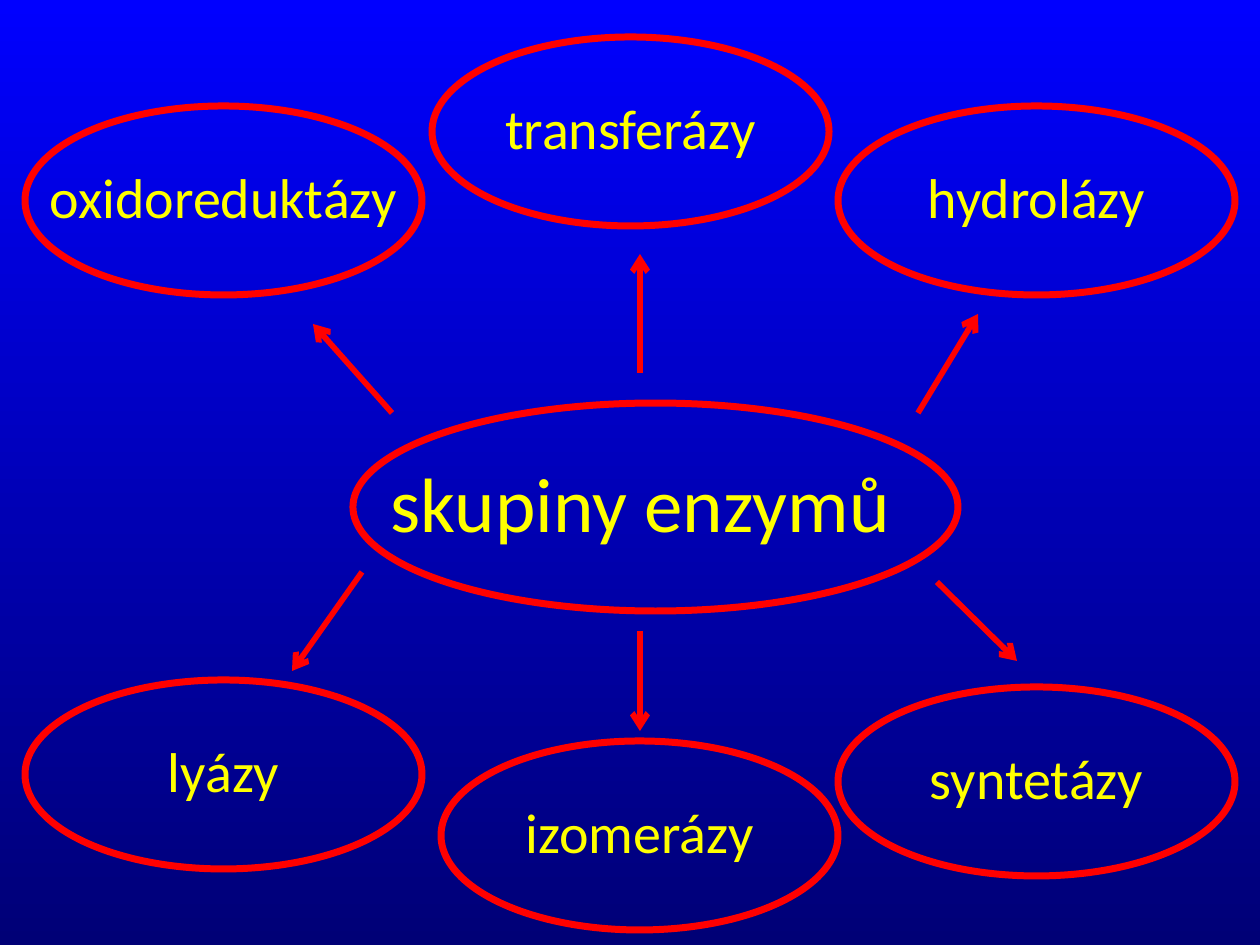
from dataclasses import dataclass

from lxml.etree import SubElement
from pptx import Presentation
from pptx.dml.color import RGBColor
from pptx.enum.shapes import MSO_CONNECTOR, MSO_SHAPE
from pptx.enum.text import MSO_ANCHOR, MSO_AUTO_SIZE, PP_ALIGN
from pptx.oxml.ns import qn
from pptx.util import Emu, Pt

PX_PER_INCH = 126
SLIDE_SIZE = (1260, 945)
GROUP_SIZE = (397, 189)
LABEL_OFFSET = (10, 50)
LABEL_SIZE = (377, 81)

GROUPS = [
    ("oxidoreduktázy", 25, 106),
    ("transferázy", 432, 37),
    ("hydrolázy", 838, 106),
    ("lyázy", 25, 680),
    ("izomerázy", 441, 741),
    ("syntetázy", 838, 687),
]
ARROWS = [
    ((392, 413), (313, 324)),
    ((640, 373), (640, 254)),
    ((918, 413), (978, 314)),
    ((362, 572), (292, 671)),
    ((640, 631), (640, 731)),
    ((937, 582), (1017, 661)),
]


@dataclass(frozen=True)
class Theme:
    font: str = "Calibri"
    text: RGBColor = RGBColor(0xFF, 0xFF, 0x00)
    outline: RGBColor = RGBColor(0xFF, 0x00, 0x00)
    background_top: RGBColor = RGBColor(0x00, 0x00, 0xFF)
    background_bottom: RGBColor = RGBColor(0x00, 0x00, 0x76)
    title_size: float = 44
    label_size: float = 32
    ellipse_width: float = 4
    arrow_width: float = 3.25


def px(*lengths):
    """Turn px lengths into a list of EMU lengths."""
    return [Emu(round(length * 914400 / PX_PER_INCH)) for length in lengths]


class SlideBuilder:
    def __init__(self, slide, theme):
        self.slide = slide
        self.theme = theme

    def background(self):
        fill = self.slide.background.fill
        fill.gradient()
        fill.gradient_angle = 270
        colors = (self.theme.background_top, self.theme.background_bottom)
        for stop, color in zip(fill.gradient_stops, colors):
            stop.color.rgb = color

    def set_text(self, text_frame, text, size):
        text_frame.word_wrap = True
        paragraph = text_frame.paragraphs[0]
        paragraph.text = text
        paragraph.alignment = PP_ALIGN.CENTER
        paragraph.font.name = self.theme.font
        paragraph.font.size = Pt(size)
        paragraph.font.color.rgb = self.theme.text

    def title(self, text, *box):
        title = self.slide.shapes.title
        title.left, title.top, title.width, title.height = px(*box)
        title.text_frame.vertical_anchor = MSO_ANCHOR.MIDDLE
        self.set_text(title.text_frame, text, self.theme.title_size)

    def ellipse(self, *box):
        ellipse = self.slide.shapes.add_shape(MSO_SHAPE.OVAL, *px(*box))
        ellipse.shadow.inherit = False
        ellipse.fill.background()
        ellipse.line.color.rgb = self.theme.outline
        ellipse.line.width = Pt(self.theme.ellipse_width)

    def label(self, text, *box):
        text_box = self.slide.shapes.add_textbox(*px(*box))
        self.set_text(text_box.text_frame, text, self.theme.label_size)
        text_box.text_frame.auto_size = MSO_AUTO_SIZE.SHAPE_TO_FIT_TEXT

    def group(self, text, left, top):
        """Draw one enzyme group: an ellipse with its label."""
        self.ellipse(left, top, *GROUP_SIZE)
        self.label(text, left + LABEL_OFFSET[0], top + LABEL_OFFSET[1], *LABEL_SIZE)

    def arrow(self, start, end):
        arrow = self.slide.shapes.add_connector(
            MSO_CONNECTOR.STRAIGHT, *px(*start, *end))
        arrow.line.color.rgb = self.theme.outline
        arrow.line.width = Pt(self.theme.arrow_width)
        properties = arrow._element.spPr
        SubElement(properties.find(qn("a:ln")), qn("a:tailEnd"), type="arrow")
        SubElement(properties, qn("a:effectLst"))


def main():
    presentation = Presentation()
    presentation.slide_width, presentation.slide_height = px(*SLIDE_SIZE)
    slide = presentation.slides.add_slide(presentation.slide_layouts[5])
    builder = SlideBuilder(slide, Theme())
    builder.background()
    builder.title("skupiny enzymů", 105, 423, 1071, 158)
    builder.ellipse(353, 403, 605, 208)
    for name, left, top in GROUPS:
        builder.group(name, left, top)
    for start, end in ARROWS:
        builder.arrow(start, end)
    presentation.save("out.pptx")


if __name__ == "__main__":
    main()
